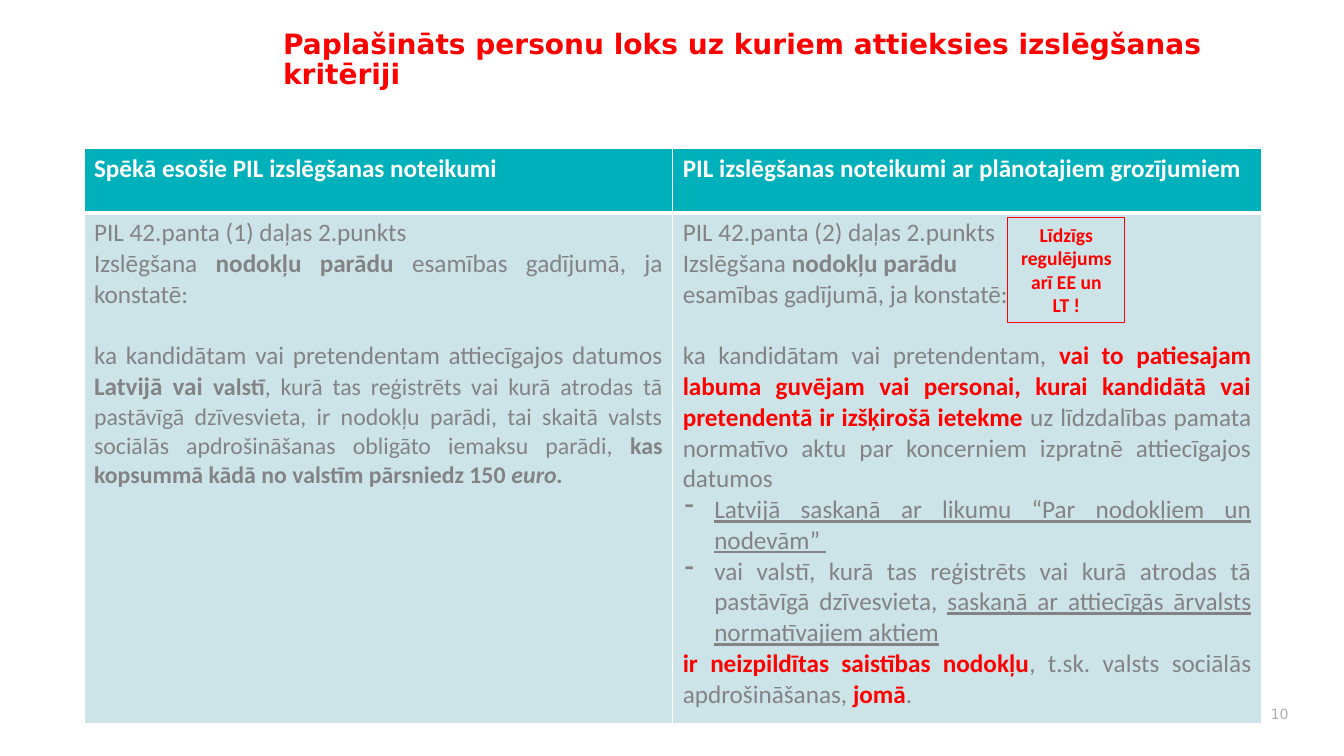
import pptx
import pptx.dml.color
import pptx.enum.shapes
import pptx.enum.text
import pptx.oxml
import pptx.oxml.ns
import pptx.util

Pt = pptx.util.Pt
ALIGN = pptx.enum.text.PP_ALIGN
ANCHOR = pptx.enum.text.MSO_ANCHOR

RED, WHITE, GREY, PALE_GREY = "FF0000", "FFFFFF", "838386", "ADADAF"
TEAL, PALE_TEAL = "00B0BA", "CCE4E7"
HEADING_FONT, TEXT_FONT = "DejaVu Sans", "Calibri"

PLAIN = {"name": TEXT_FONT, "size": Pt(18), "bold": False, "color": GREY}
BOLD = PLAIN | {"bold": True}
KEY = BOLD | {"color": RED}
UNDERLINED = PLAIN | {"underline": True}
SMALL = PLAIN | {"size": Pt(17)}
SMALL_BOLD = SMALL | {"bold": True}
HEADER = BOLD | {"color": WHITE}

JUSTIFIED = {"alignment": ALIGN.JUSTIFY}
GAP = {"space_before": Pt(22)}
DASHED = JUSTIFIED | {"dash": True}

HEADERS = [
    "Spēkā esošie PIL izslēgšanas noteikumi",
    "PIL izslēgšanas noteikumi ar plānotajiem grozījumiem",
]
CURRENT_RULES = [
    (JUSTIFIED, [("PIL 42.panta (1) daļas 2.punkts", PLAIN)]),
    (JUSTIFIED, [
        ("Izslēgšana ", PLAIN),
        ("nodokļu parādu ", BOLD),
        ("esamības gadījumā, ja konstatē:", PLAIN),
    ]),
    (JUSTIFIED | GAP, [
        ("ka kandidātam vai pretendentam attiecīgajos datumos ", PLAIN),
        ("Latvijā vai ", BOLD),
        ("valstī", SMALL_BOLD),
        (", kurā tas reģistrēts vai kurā atrodas tā pastāvīgā dzīvesvieta, "
         "ir nodokļu parādi, tai skaitā valsts sociālās apdrošināšanas "
         "obligāto iemaksu parādi, ", SMALL),
        ("kas kopsummā kādā no valstīm pārsniedz 150 ", SMALL_BOLD),
        ("euro.", SMALL_BOLD | {"italic": True}),
    ]),
]
PLANNED_RULES = [
    ({}, [("PIL 42.panta (2) daļas 2.punkts", PLAIN)]),
    ({}, [("Izslēgšana ", PLAIN), ("nodokļu parādu", BOLD)]),
    ({}, [("esamības gadījumā, ja konstatē:", PLAIN)]),
    (JUSTIFIED | GAP, [
        ("ka kandidātam vai pretendentam, ", PLAIN),
        ("vai to patiesajam labuma guvējam vai personai, kurai kandidātā "
         "vai pretendentā ir izšķirošā ietekme ", KEY),
        ("uz līdzdalības pamata normatīvo aktu par koncerniem izpratnē "
         "attiecīgajos datumos ", PLAIN),
    ]),
    (DASHED, [("Latvijā saskaņā ar likumu “Par nodokļiem un nodevām” ", UNDERLINED)]),
    (DASHED, [
        ("vai valstī, kurā tas reģistrēts vai kurā atrodas tā pastāvīgā "
         "dzīvesvieta, ", PLAIN),
        ("saskaņā ar attiecīgās ārvalsts normatīvajiem aktiem", UNDERLINED),
    ]),
    (JUSTIFIED, [
        ("ir neizpildītas saistības nodokļu", KEY),
        (", t.sk. valsts sociālās apdrošināšanas, ", PLAIN),
        ("jomā", KEY),
        (".", PLAIN),
    ]),
]


def rgb(value):
    return pptx.dml.color.RGBColor.from_string(value)


def set_attributes(target, values):
    for name, value in values.items():
        setattr(target, name, value)


def paint(fill, color):
    fill.solid()
    fill.fore_color.rgb = rgb(color)


def place(shape, left, top, width, height):
    box = {"left": left, "top": top, "width": width, "height": height}
    set_attributes(shape, {name: Pt(length) for name, length in box.items()})


def add_dash(paragraph):
    """Give the paragraph a hanging indent and a dash bullet."""
    properties = paragraph._p.get_or_add_pPr()
    properties.set("marL", str(Pt(22.5)))
    properties.set("indent", str(-Pt(22.5)))
    bullet = f'<a:buChar {pptx.oxml.ns.nsdecls("a")} char="⁃"/>'
    properties.append(pptx.oxml.parse_xml(bullet))


def write(text_frame, paragraphs):
    """Fill the frame from (paragraph format, [(text, font format)]) pairs."""
    for index, (layout, runs) in enumerate(paragraphs):
        paragraph = text_frame.add_paragraph() if index else text_frame.paragraphs[0]
        layout = dict(layout)
        if layout.pop("dash", False):
            add_dash(paragraph)
        set_attributes(paragraph, layout)
        for text, style in runs:
            run = paragraph.add_run()
            run.text = text
            font_values = dict(style)
            run.font.color.rgb = rgb(font_values.pop("color"))
            set_attributes(run.font, font_values)


def set_borders(cell, widths):
    """Draw white cell borders, with widths by side: L, R, T, B."""
    properties = cell._tc.get_or_add_tcPr()
    for index, (side, width) in enumerate(widths.items()):
        properties.insert(index, pptx.oxml.parse_xml(
            f'<a:ln{side} {pptx.oxml.ns.nsdecls("a")} w="{Pt(width)}">'
            f'<a:solidFill><a:srgbClr val="{WHITE}"/></a:solidFill></a:ln{side}>'))


def add_title(slide, text):
    title = slide.shapes.title
    place(title, 195, 18, 718, 81)
    set_attributes(title.text_frame, {
        "word_wrap": True,
        "vertical_anchor": ANCHOR.TOP,
        "auto_size": pptx.enum.text.MSO_AUTO_SIZE.NONE,
    })
    style = {"name": HEADING_FONT, "size": Pt(20), "bold": True, "color": RED}
    layout = {"alignment": ALIGN.LEFT, "line_spacing": 0.9, "space_before": Pt(0)}
    write(title.text_frame, [(layout, [(text, style)])])


def add_comparison(slide):
    table = slide.shapes.add_table(2, 2, Pt(60), Pt(106), Pt(841), Pt(411)).table
    for row, height in zip(table.rows, (46, 365)):
        row.height = Pt(height)
    header_cells = [[({}, [(text, HEADER)])] for text in HEADERS]
    rows = [
        (header_cells, TEAL, 3, 1),
        ([CURRENT_RULES, PLANNED_RULES], PALE_TEAL, 1, 3),
    ]
    for row, (contents, color, bottom, top) in enumerate(rows):
        for column, paragraphs in enumerate(contents):
            cell = table.cell(row, column)
            paint(cell.fill, color)
            set_borders(cell, {"L": 1, "R": 1, "T": top, "B": bottom})
            write(cell.text_frame, paragraphs)


def add_page_number(slide, number):
    box = slide.shapes.add_textbox(Pt(883.5), Pt(498), Pt(44), Pt(24))
    set_attributes(box.text_frame, {"word_wrap": True, "vertical_anchor": ANCHOR.MIDDLE})
    style = {"name": HEADING_FONT, "size": Pt(10), "color": PALE_GREY}
    write(box.text_frame, [({"alignment": ALIGN.RIGHT}, [(number, style)])])


def add_callout(slide, text):
    callout = slide.shapes.add_shape(
        pptx.enum.shapes.MSO_SHAPE.RECTANGLE, Pt(720), Pt(155.5), Pt(83.5), Pt(75))
    callout.shadow.inherit = False
    callout.fill.background()
    callout.line.color.rgb = rgb(RED)
    callout.line.width = Pt(0.75)
    set_attributes(callout.text_frame, {"word_wrap": True, "vertical_anchor": ANCHOR.TOP})
    style = KEY | {"size": Pt(14)}
    write(callout.text_frame, [({"alignment": ALIGN.CENTER}, [(text, style)])])


def main():
    presentation = pptx.Presentation()
    set_attributes(presentation, {"slide_width": Pt(960), "slide_height": Pt(540)})
    slide = presentation.slides.add_slide(presentation.slide_layouts[5])
    add_title(slide, "Paplašināts personu loks uz kuriem attieksies izslēgšanas kritēriji")
    add_comparison(slide)
    add_page_number(slide, "10")
    add_callout(slide, "Līdzīgs regulējums arī EE un LT !")
    presentation.save("out.pptx")


if __name__ == "__main__":
    main()
